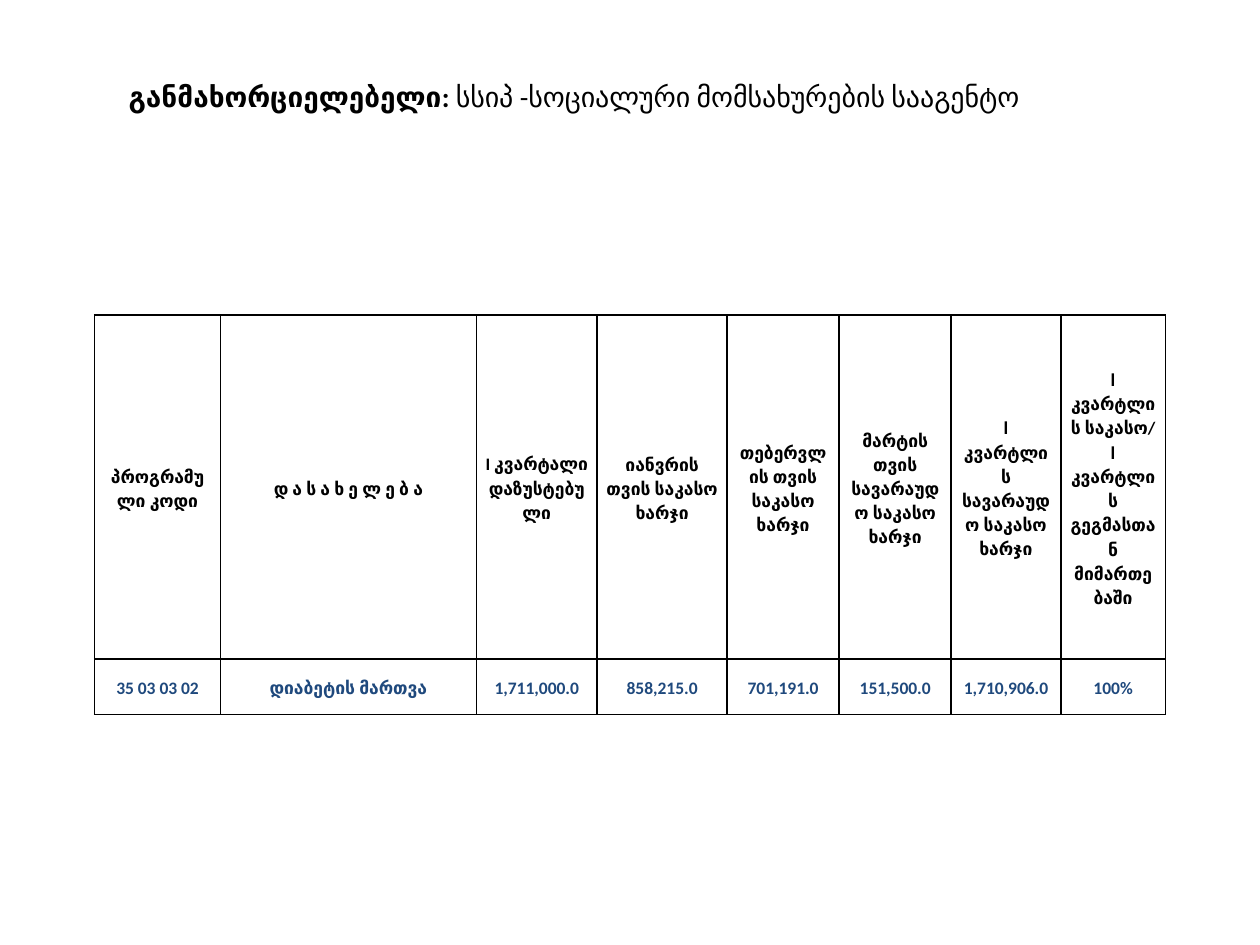
"""Build a slide with a programme spending table."""
from typing import NamedTuple

from lxml import etree
from pptx import Presentation
from pptx import util as u
from pptx.dml.color import RGBColor
from pptx.enum import text as t
from pptx.oxml import ns

BLACK = RGBColor(0, 0, 0)
WHITE = RGBColor(255, 255, 255)
BLUE = RGBColor(0x1F, 0x49, 0x7D)
LATO, CALIBRI = "Lato", "Calibri"


class Part(NamedTuple):
    text: str
    font: str = LATO


class Column(NamedTuple):
    width: float
    head: list[Part]
    value: Part


COLUMNS = [
    Column(1, [Part("პროგრამული კოდი")], Part("35 03 03 02", CALIBRI)),
    Column(2.03, [Part("დ ა ს ა ხ ე ლ ე ბ ა")], Part("დიაბეტის მართვა")),
    Column(0.96, [Part("I ", CALIBRI), Part("კვარტალი დაზუსტებული")],
           Part("1,711,000.0", CALIBRI)),
    Column(1.03, [Part("იანვრის თვის საკასო ხარჯი")], Part("858,215.0", CALIBRI)),
    Column(0.89, [Part("თებერვლის თვის საკასო ხარჯი")], Part("701,191.0", CALIBRI)),
    Column(0.89, [Part("მარტის თვის სავარაუდო საკასო ხარჯი")],
           Part("151,500.0", CALIBRI)),
    Column(0.87, [Part("I კვარტლის სავარაუდო საკასო ხარჯი")],
           Part("1,710,906.0", CALIBRI)),
    Column(0.83, [Part("I კვარტლის საკასო"), Part("/", CALIBRI),
                  Part(" I კვარტლის გეგმასთან მიმართებაში")], Part("100%", CALIBRI)),
]
ROWS = [2.73, 0.44]


def write(para, text: str, *, font: str = CALIBRI, size: float = 10,
          color: RGBColor = BLACK, bold: bool = True) -> None:
    run = para.add_run()
    run.text = text
    run.font.name = font
    run.font.size = u.Pt(size)
    run.font.bold = bold
    run.font.color.rgb = color


def border(cell) -> None:
    props = cell._tc.get_or_add_tcPr()
    for side in ("lnL", "lnR", "lnT", "lnB"):
        line = etree.SubElement(props, ns.qn(f"a:{side}"), w=str(u.Pt(1)))
        fill = etree.SubElement(line, ns.qn("a:solidFill"))
        etree.SubElement(fill, ns.qn("a:srgbClr"), val=str(BLACK))


def draw_cell(cell, parts: list[Part], color: RGBColor) -> None:
    cell.margin_left = cell.margin_right = u.Inches(0.07)
    cell.margin_top = cell.margin_bottom = 0
    cell.vertical_anchor = t.MSO_ANCHOR.MIDDLE
    border(cell)
    para = cell.text_frame.paragraphs[0]
    para.alignment = t.PP_ALIGN.CENTER
    para.line_spacing = 1.15
    for part in parts:
        write(para, part.text, font=part.font, color=color)


def draw_title(shape) -> None:
    shape.left, shape.top = u.Inches(0.92), u.Inches(0.58)
    shape.width, shape.height = u.Inches(7.67), u.Inches(0.37)
    frame = shape.text_frame
    frame.word_wrap = True
    frame.auto_size = t.MSO_AUTO_SIZE.SHAPE_TO_FIT_TEXT
    frame.vertical_anchor = t.MSO_ANCHOR.TOP
    para = frame.paragraphs[0]
    para.alignment = t.PP_ALIGN.LEFT
    write(para, "განმახორციელებელი:", size=16)
    write(para, " სსიპ -სოციალური მომსახურების სააგენტო", size=16, bold=False)


def draw_table(slide) -> None:
    table = slide.shapes.add_table(
        len(ROWS), len(COLUMNS), u.Inches(0.75), u.Inches(2.5),
        u.Inches(8.5), u.Inches(sum(ROWS))).table
    table.first_row = table.horz_banding = False
    for row, height in zip(table.rows, ROWS):
        row.height = u.Inches(height)
    for i, col in enumerate(COLUMNS):
        table.columns[i].width = u.Inches(col.width)
        head, value = table.cell(0, i), table.cell(1, i)
        draw_cell(head, col.head, BLACK)
        head.fill.solid()
        head.fill.fore_color.rgb = WHITE
        draw_cell(value, [col.value], BLUE)
        value.fill.background()


def main() -> None:
    deck = Presentation()
    deck.slide_width, deck.slide_height = u.Inches(10), u.Inches(7.5)
    slide = deck.slides.add_slide(deck.slide_layouts.get_by_name("Title Only"))
    draw_title(slide.shapes.title)
    draw_table(slide)
    deck.save("out.pptx")


if __name__ == "__main__":
    main()
